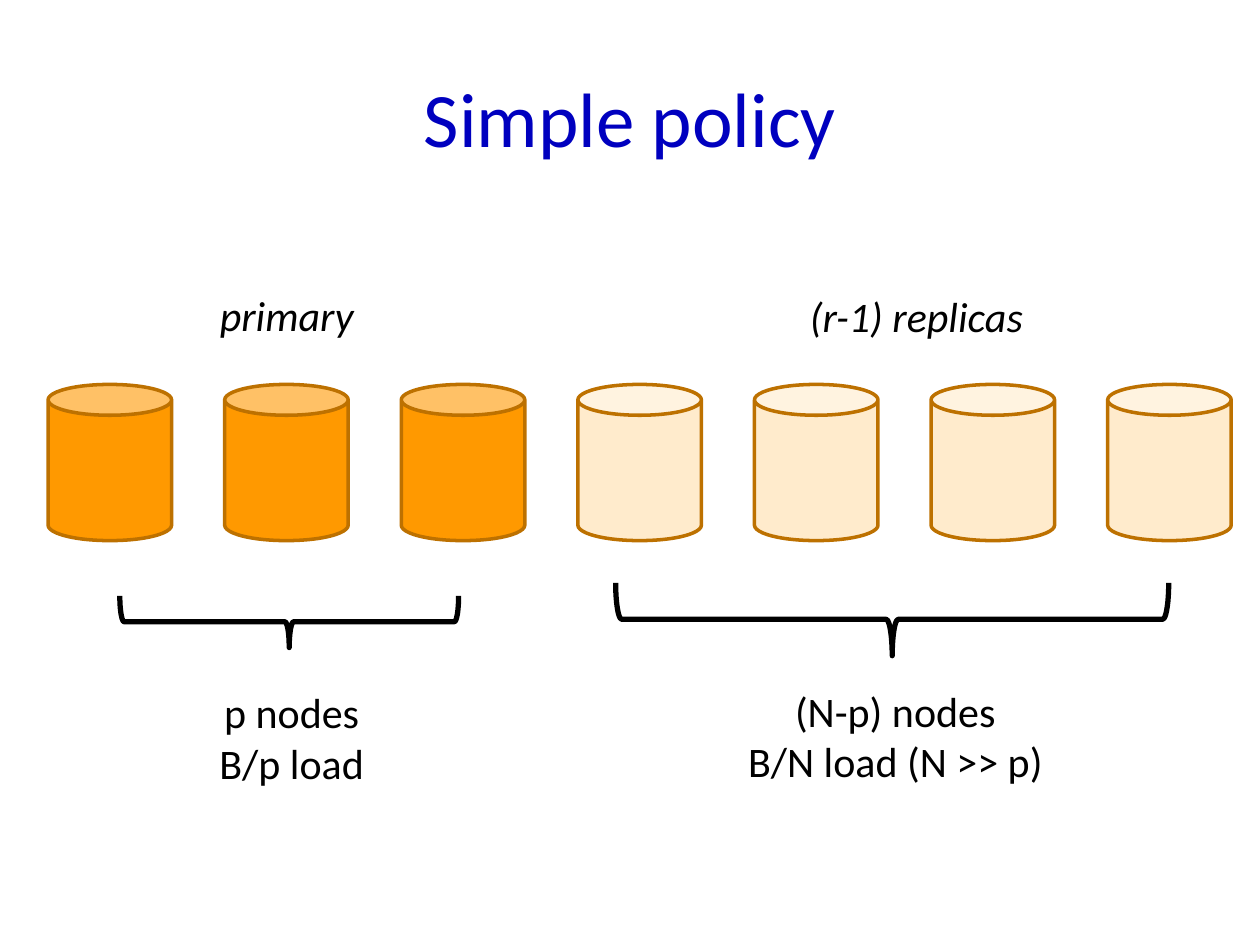
from pptx import Presentation
from pptx.dml.color import RGBColor
from pptx.enum.shapes import MSO_SHAPE
from pptx.enum.text import MSO_ANCHOR, MSO_AUTO_SIZE, PP_ALIGN
from pptx.util import Cm, Pt

CAN, BRACE = MSO_SHAPE.CAN, MSO_SHAPE.RIGHT_BRACE
CENTER, MIDDLE = PP_ALIGN.CENTER, MSO_ANCHOR.MIDDLE
FIT_SHAPE = MSO_AUTO_SIZE.SHAPE_TO_FIT_TEXT

COLORS = {"title": "0000BF", "text": "000000", "primary": "FF9900",
          "replica": "FFEBCC", "outline": "BD7100"}
PRIMARIES, REPLICAS = 3, 4
CAN_LEFT, CAN_PITCH = 0.97, 3.56


def rgb(name):
    return RGBColor.from_string(COLORS[name])


def write(tf, text, color="text", **font):
    """Fill a text frame; a newline starts a paragraph, a vertical tab a line."""
    tf.text = text
    tf.word_wrap = True
    formats = {"name": "Calibri", "size": Pt(24), **font}
    for p in tf.paragraphs:
        p.alignment = CENTER
        for r in p.runs:
            r.font.color.rgb = rgb(color)
            for key, value in formats.items():
                setattr(r.font, key, value)


def add_title(s, text):
    sp = s.shapes.title
    box = {"left": 1.27, "top": 0.76, "width": 22.86, "height": 3.18}
    for key, value in box.items():
        setattr(sp, key, Cm(value))
    sp.text_frame.vertical_anchor = MIDDLE
    write(sp.text_frame, text, "title", size=Pt(44))


def add_label(s, text, left, top, width, height, **font):
    sp = s.shapes.add_textbox(Cm(left), Cm(top), Cm(width), Cm(height))
    write(sp.text_frame, text, **font)
    sp.text_frame.auto_size = FIT_SHAPE


def add_outlined(s, kind, box, line, weight):
    sp = s.shapes.add_shape(kind, *map(Cm, box))
    sp.shadow.inherit = False
    sp.line.color.rgb = rgb(line)
    sp.line.width = Pt(weight)
    return sp


def add_node(s, index):
    box = (CAN_LEFT + index * CAN_PITCH, 7.75, 2.49, 3.15)
    sp = add_outlined(s, CAN, box, "outline", 2)
    sp.fill.solid()
    sp.fill.fore_color.rgb = rgb("primary" if index < PRIMARIES else "replica")


def add_brace(s, *box):
    """Add a brace that opens upwards; box is its frame before the turn."""
    sp = add_outlined(s, BRACE, box, "text", 3)
    sp.fill.background()
    sp.rotation = 90


def main():
    prs = Presentation()
    prs.slide_width, prs.slide_height = Cm(25.4), Cm(19.05)
    s = prs.slides.add_slide(prs.slide_layouts[5])

    add_title(s, "Simple policy")
    for index in range(PRIMARIES + REPLICAS):
        add_node(s, index)
    add_brace(s, 5.31, 9.12, 1.04, 6.83)
    add_brace(s, 17.25, 6.91, 1.47, 11.15)
    add_label(s, "p nodes\nB/p load", 3.58, 13.72, 4.6, 2.31)
    add_label(s, "(N-p) nodes\vB/N load (N >> p)", 14.43, 13.69, 7.24, 2.31)
    add_label(s, "primary", 3.48, 5.72, 4.6, 1.27, italic=True)
    add_label(s, "(r-1) replicas", 15.77, 5.74, 5.41, 1.27, italic=True)

    prs.save("out.pptx")


if __name__ == "__main__":
    main()
